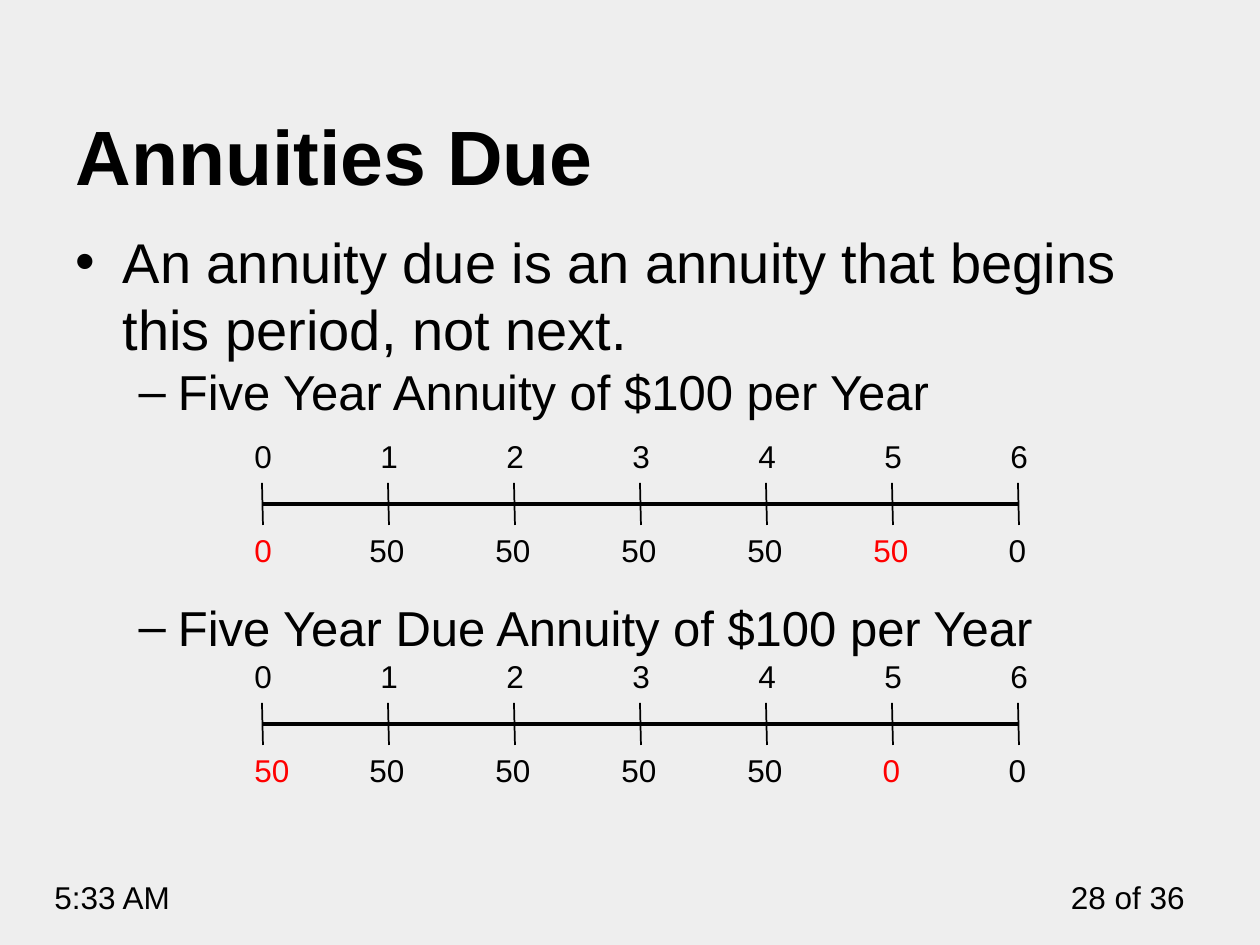
from lxml import etree
from pptx import Presentation, util as u
from pptx.dml.color import RGBColor
from pptx.enum import shapes, text
from pptx.oxml.ns import qn

PX = u.Inches(1) / 126
COLORS = {"ground": "EEEEEE", "ink": "000000", "changed": "FF0000"}
YEAR_STEP = 126
FIRST_TICK = 262


def px(length):
    return u.Emu(round(length * PX))


def place(box, left, top, width, height):
    box.left, box.top, box.width, box.height = map(px, (left, top, width, height))


def write(paragraph, words, size=18, color="ink", bold=False, align=text.PP_ALIGN.LEFT):
    paragraph.alignment = align
    run = paragraph.add_run()
    run.text = words
    run.font.name = "Arial"
    run.font.size = u.Pt(size)
    run.font.bold = bold
    run.font.color.rgb = RGBColor.from_string(COLORS[color])


def add_label(slide, words, left, top, width, indent=0, **style):
    label = slide.shapes.add_textbox(px(left), px(top), px(width), px(50))
    frame = label.text_frame
    frame.word_wrap = True
    frame.auto_size = text.MSO_AUTO_SIZE.SHAPE_TO_FIT_TEXT
    frame.margin_left += px(indent)
    write(frame.paragraphs[0], words, **style)


def add_line(slide, start, end, weight):
    line = slide.shapes.add_connector(shapes.MSO_CONNECTOR.STRAIGHT, *map(px, start + end))
    line.line.color.rgb = RGBColor.from_string(COLORS["ink"])
    line.line.width = u.Pt(weight)
    etree.SubElement(line._element.spPr, qn("a:effectLst"))


def add_timeline(slide, axis, payments, changed_years):
    last_tick = FIRST_TICK + YEAR_STEP * (len(payments) - 1)
    add_line(slide, (FIRST_TICK, axis), (last_tick, axis), 2.25)
    for year, payment in enumerate(payments):
        tick = FIRST_TICK + YEAR_STEP * year
        add_line(slide, (tick, axis - 21), (tick + 1, axis + 21), 1)
        add_label(slide, str(year), tick - 20, axis - 73, 42)
        # Later payments sit further left, with a lone zero nudged under its tick
        add_label(slide, payment, tick - (31 if year else 20), axis + 21, 73,
                  indent=9 if year and payment == "0" else 0,
                  color="changed" if year in changed_years else "ink")


def add_title(slide, words):
    title = slide.shapes.title
    place(title, 63, 49, 1134, 158)
    title.text_frame.vertical_anchor = text.MSO_ANCHOR.BOTTOM
    title.text_frame.auto_size = text.MSO_AUTO_SIZE.NONE
    write(title.text_frame.paragraphs[0], words, size=44, bold=True)


def add_bullets(slide, bullets):
    body = slide.placeholders[1]
    place(body, 63, 221, 1134, 624)
    frame = body.text_frame
    frame.auto_size = text.MSO_AUTO_SIZE.NONE
    for number, (words, level, size, space) in enumerate(bullets):
        paragraph = frame.add_paragraph() if number else frame.paragraphs[0]
        paragraph.level = level
        paragraph.space_before = u.Pt(space)
        write(paragraph, words, size=size)


def main():
    deck = Presentation()
    deck.slide_width, deck.slide_height = px(1260), px(945)
    slide = deck.slides.add_slide(deck.slide_layouts[1])
    slide.background.fill.solid()
    slide.background.fill.fore_color.rgb = RGBColor.from_string(COLORS["ground"])

    # Footer
    add_label(slide, "28 of 36", 1050, 872, 147, align=text.PP_ALIGN.RIGHT)
    add_label(slide, "5:33 AM", 42, 872, 199)

    # Title and list; the last item leaves room for the first timeline
    add_title(slide, "Annuities Due")
    add_bullets(slide, [
        ("An annuity due is an annuity that begins this period, not next.", 0, 32, 0),
        ("Five Year Annuity of $100 per Year", 1, 28, 0),
        ("Five Year Due Annuity of $100 per Year", 1, 28, 101),
    ])

    # Timelines: ordinary annuity, then annuity due
    add_timeline(slide, 504, ["0"] + ["50"] * 5 + ["0"], {0, 5})
    add_timeline(slide, 724, ["50"] * 5 + ["0"] * 2, {0, 5})
    deck.save("out.pptx")


if __name__ == "__main__":
    main()
